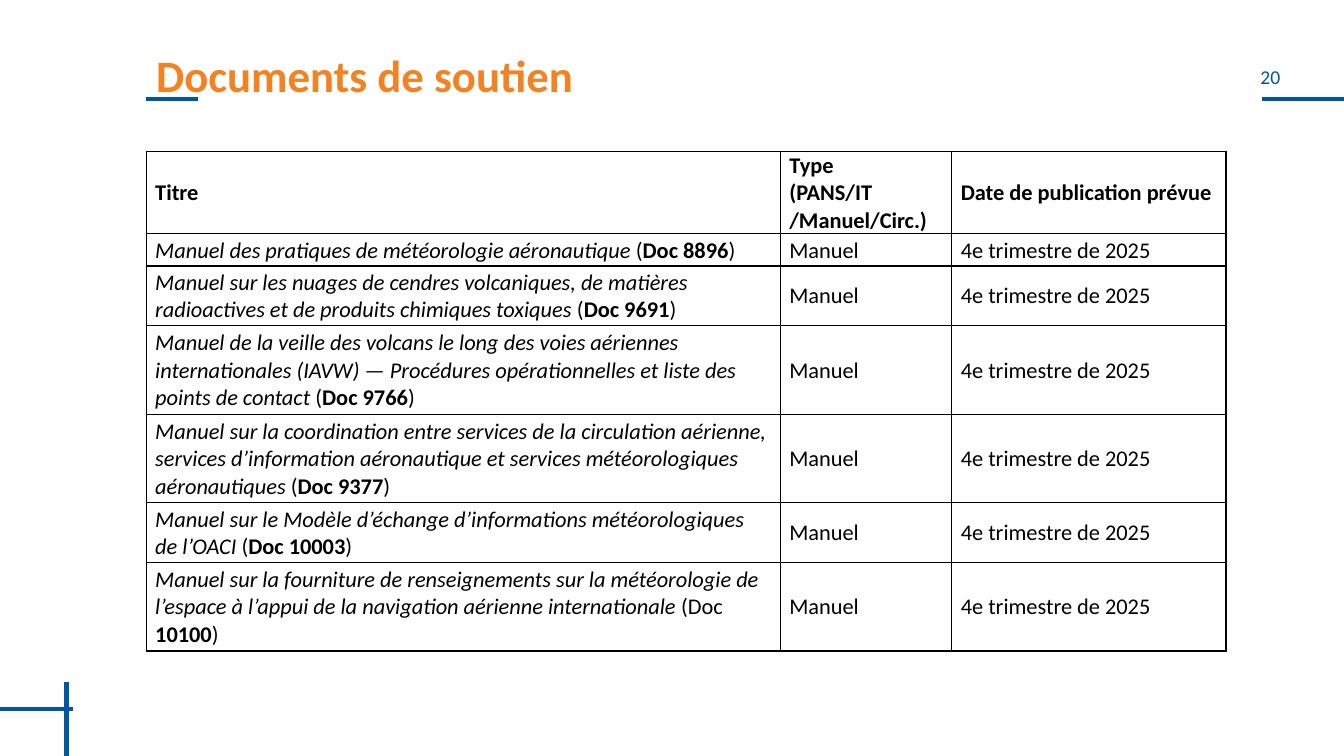
from lxml import etree
from pptx import Presentation
from pptx.dml.color import RGBColor
from pptx.enum import shapes, text
from pptx.oxml import ns
from pptx.util import Inches, Pt

FONT = "Calibri"
COLORS = {"blue": "0055A5", "orange": "F58220", "black": "000000"}
TITLE = "Documents de soutien"
PAGE = "20"
HEADERS = ["Titre", "Type\n(PANS/IT /Manuel/Circ.)", "Date de publication prévue"]
KIND, DATE = "Manuel", "4e trimestre de 2025"
# Title, opening text, bold reference
DOCUMENTS = [
    ("Manuel des pratiques de météorologie aéronautique", " (", "Doc 8896"),
    ("Manuel sur les nuages de cendres volcaniques, de matières radioactives "
     "et de produits chimiques toxiques", " (", "Doc 9691"),
    ("Manuel de la veille des volcans le long des voies aériennes internationales (IAVW) — "
     "Procédures opérationnelles et liste des points de contact", " (", "Doc 9766"),
    ("Manuel sur la coordination entre services de la circulation aérienne, services "
     "d’information aéronautique et services météorologiques aéronautiques", " (", "Doc 9377"),
    ("Manuel sur le Modèle d’échange d’informations météorologiques de l’OACI",
     " (", "Doc 10003"),
    ("Manuel sur la fourniture de renseignements sur la météorologie de l’espace "
     "à l’appui de la navigation aérienne internationale", " (Doc ", "10100"),
]
COL_WIDTHS = [6.29, 1.7, 2.72]
ROW_HEIGHTS = [0.82, 0.32, 0.59, 0.88, 0.88, 0.59, 0.88]
LEFT, TABLE_TOP = 1.45, 1.5
RULES = [(12.52, 0.98, 13.33, 0.98), (0.66, 6.77, 0.66, 7.5),
         (LEFT, 0.98, 1.96, 0.98), (0.72, 7.03, 0, 7.03)]


def add_run(p, words, size, color, bold=False, italic=False):
    r = p.add_run()
    r.text = words
    r.font.name, r.font.size = FONT, Pt(size)
    r.font.bold, r.font.italic = bold, italic
    r.font.color.rgb = RGBColor.from_string(COLORS[color])


def add_box(s, box, wrap, inset):
    tf = s.shapes.add_textbox(*map(Inches, box)).text_frame
    tf.word_wrap = wrap
    tf.vertical_anchor = text.MSO_ANCHOR.TOP
    tf.margin_left = tf.margin_right = Inches(inset)
    tf.margin_top = tf.margin_bottom = Inches(inset / 2)
    return tf.paragraphs[0]


def fill_cell(cell, runs):
    cell.fill.background()
    cell.vertical_anchor = text.MSO_ANCHOR.MIDDLE
    cell.margin_left = cell.margin_right = Inches(0.09)
    cell.margin_top, cell.margin_bottom = Inches(0.01), 0
    p = cell.text_frame.paragraphs[0]
    p.space_after = Pt(8)
    for words, bold, italic in runs:
        for i, line in enumerate(words.split("\n")):
            if i:
                p.add_line_break()
            add_run(p, line, 16, "black", bold, italic)
    # Borders come before the fill in the cell properties
    tc_pr = cell._tc.get_or_add_tcPr()
    for i, side in enumerate(("lnL", "lnR", "lnT", "lnB")):
        ln = etree.Element(ns.qn(f"a:{side}"), w=str(Pt(1)))
        solid = etree.SubElement(ln, ns.qn("a:solidFill"))
        etree.SubElement(solid, ns.qn("a:srgbClr"), val=COLORS["black"])
        tc_pr.insert(i, ln)


def main():
    prs = Presentation()
    prs.slide_width, prs.slide_height = Inches(13.33), Inches(7.5)
    s = prs.slides.add_slide(prs.slide_layouts[6])

    # Decorative rules
    for ends in RULES:
        line = s.shapes.add_connector(shapes.MSO_CONNECTOR.STRAIGHT, *map(Inches, ends))
        line.line.width = Pt(3)
        line.line.color.rgb = RGBColor.from_string(COLORS["blue"])
        etree.SubElement(line._element.spPr, ns.qn("a:effectLst"))

    # Page number and title
    p = add_box(s, (12, 0.64, 1.2, 0.33), False, 0)
    p.alignment = text.PP_ALIGN.CENTER
    add_run(p, PAGE, 14, "blue")
    p = add_box(s, (LEFT, 0.48, sum(COL_WIDTHS), 0.46), True, 0.1)
    p.line_spacing = 0.9
    add_run(p, TITLE, 32, "orange", bold=True)

    # Table of documents
    rows = [[[(h, True, False)] for h in HEADERS]]
    for name, opening, ref in DOCUMENTS:
        title = [(name, False, True), (opening, False, False),
                 (ref, True, False), (")", False, False)]
        rows.append([title, [(KIND, False, False)], [(DATE, False, False)]])
    table = s.shapes.add_table(
        len(rows), len(COL_WIDTHS), Inches(LEFT), Inches(TABLE_TOP),
        Inches(sum(COL_WIDTHS)), Inches(sum(ROW_HEIGHTS))).table
    table.horz_banding = False
    for col, width in zip(table.columns, COL_WIDTHS):
        col.width = Inches(width)
    for row, height, contents in zip(table.rows, ROW_HEIGHTS, rows):
        row.height = Inches(height)
        for cell, runs in zip(row.cells, contents):
            fill_cell(cell, runs)

    prs.save("out.pptx")


if __name__ == "__main__":
    main()
